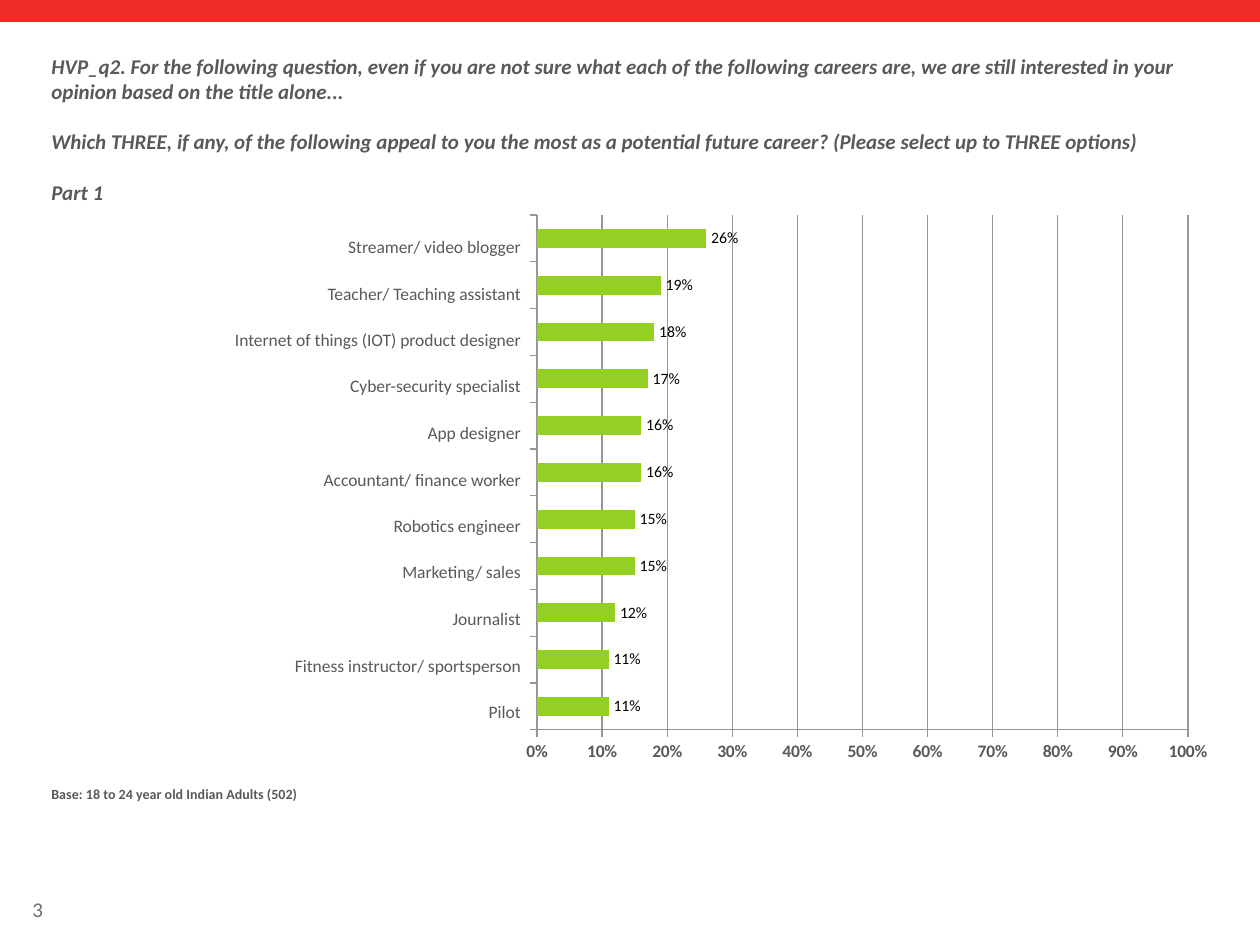
from pptx import Presentation
from pptx.chart.data import CategoryChartData
from pptx.dml.color import RGBColor
from pptx.enum import chart as charts, shapes, text
from pptx.oxml import parse_xml
from pptx.oxml.ns import nsdecls
from pptx.util import Emu, Pt

QUESTION = [
    "HVP_q2. For the following question, even if you are not sure what each of the following "
    "careers are, we are still interested in your opinion based on the title alone...",
    "Which THREE, if any, of the following appeal to you the most as a potential future career? "
    "(Please select up to THREE options)",
    "Part 1",
]
CAREERS = [
    ("Streamer/ video blogger", 0.26),
    ("Teacher/ Teaching assistant", 0.19),
    ("Internet of things (IOT) product designer", 0.18),
    ("Cyber-security specialist", 0.17),
    ("App designer", 0.16),
    ("Accountant/ finance worker", 0.16),
    ("Robotics engineer", 0.15),
    ("Marketing/ sales", 0.15),
    ("Journalist", 0.12),
    ("Fitness instructor/ sportsperson", 0.11),
    ("Pilot", 0.11),
]
BASE = "Base: 18 to 24 year old Indian Adults (502)"
PAGE = "3"

RED = RGBColor(0xEE, 0x2D, 0x27)
GREEN = RGBColor(0x93, 0xD0, 0x23)
DARK = RGBColor(0x59, 0x59, 0x59)
GREY = RGBColor(0x6D, 0x6F, 0x71)
LINE = RGBColor(0x96, 0x96, 0x96)
BLACK = RGBColor(0, 0, 0)

PX = 914400 // 126
CHART_BOX = (513, 203, 709, 571)
PLOT_BOX = (537, 215, 651, 515)
LABEL_TOP, LABEL_LAST = 223, 688


def px(*lengths):
    return [Emu(length * PX) for length in lengths]


def style(font, size, color, bold=False, italic=False, name="Calibri"):
    font.name, font.size, font.bold, font.italic = name, Pt(size), bold, italic
    font.color.rgb = color


def add_text(slide, box, paragraphs, size, color=DARK, bold=False, italic=False,
             align=text.PP_ALIGN.LEFT, anchor=text.MSO_ANCHOR.TOP, gap=0):
    frame = slide.shapes.add_textbox(*px(*box)).text_frame
    frame.word_wrap = True
    frame.vertical_anchor = anchor
    for index, content in enumerate(paragraphs):
        paragraph = frame.add_paragraph() if index else frame.paragraphs[0]
        paragraph.text = content
        paragraph.alignment = align
        if index:
            paragraph.space_before = Pt(gap)
        style(paragraph.font, size, color, bold, italic)


def add_career_chart(slide):
    data = CategoryChartData(number_format="0%")
    data.categories = [str(number + 1) for number in range(len(CAREERS))]
    data.add_series("Series 1", [share for _, share in reversed(CAREERS)])
    chart = slide.shapes.add_chart(
        charts.XL_CHART_TYPE.BAR_CLUSTERED, *px(*CHART_BOX), data).chart
    chart.has_legend = chart.has_title = False
    style(chart.font, 18, GREY, name="Manrope")

    plot = chart.plots[0]
    plot.gap_width, plot.overlap, plot.vary_by_categories = 150, -10, False
    fill = plot.series[0].format.fill
    fill.solid()
    fill.fore_color.rgb = GREEN
    plot.has_data_labels = True
    labels = plot.data_labels
    labels.show_value = True
    labels.position = charts.XL_LABEL_POSITION.OUTSIDE_END
    labels.number_format, labels.number_format_is_linked = "0%", False
    style(labels.font, 9, BLACK)

    categories, values = chart.category_axis, chart.value_axis
    categories.tick_label_position = charts.XL_TICK_LABEL_POSITION.NONE
    values.tick_label_position = charts.XL_TICK_LABEL_POSITION.LOW
    for axis in (categories, values):
        axis.major_tick_mark = charts.XL_TICK_MARK.OUTSIDE
        axis.format.line.color.rgb = LINE
        style(axis.tick_labels.font, 10, DARK, bold=axis is values)
    values.minimum_scale, values.maximum_scale, values.major_unit = 0, 1, 0.1
    values.has_major_gridlines = True
    values.major_gridlines.format.line.color.rgb = LINE
    values.tick_labels.number_format = "0%"
    values.tick_labels.number_format_is_linked = False

    left, top, width, height = CHART_BOX
    x, y, w, h = PLOT_BOX
    fractions = {"x": (x - left) / width, "y": (y - top) / height,
                 "w": w / width, "h": h / height}
    parts = "".join(f'<c:{key} val="{value:.4f}"/>' for key, value in fractions.items())
    layout = parse_xml(
        f'<c:layout {nsdecls("c")}><c:manualLayout><c:layoutTarget val="inner"/>'
        f'<c:xMode val="edge"/><c:yMode val="edge"/>{parts}</c:manualLayout></c:layout>')
    area = chart.element.chart.plotArea
    for existing in area.xpath("c:layout"):
        area.remove(existing)
    area.insert(0, layout)


def main():
    presentation = Presentation()
    presentation.slide_width, presentation.slide_height = px(1260, 945)
    slide = presentation.slides.add_slide(presentation.slide_layouts[6])

    band = slide.shapes.add_shape(shapes.MSO_SHAPE.RECTANGLE, *px(0, 0, 1260, 22))
    band.shadow.inherit = False
    band.fill.solid()
    band.fill.fore_color.rgb = RED
    band.line.fill.background()

    middle = text.MSO_ANCHOR.MIDDLE
    add_text(slide, (20, 890, 97, 38), [PAGE], 12, GREY, anchor=middle)
    add_text(slide, (39, 47, 1183, 157), QUESTION, 12, bold=True, italic=True, gap=14.5)
    add_career_chart(slide)

    pitch = (LABEL_LAST - LABEL_TOP) / (len(CAREERS) - 1)
    for index, (career, _) in enumerate(CAREERS):
        add_text(slide, (20, round(LABEL_TOP + index * pitch), 513, 47), [career], 10,
                 align=text.PP_ALIGN.RIGHT, anchor=middle)
    add_text(slide, (39, 779, 1183, 54), [BASE], 8, bold=True)

    presentation.save("out.pptx")


if __name__ == "__main__":
    main()
